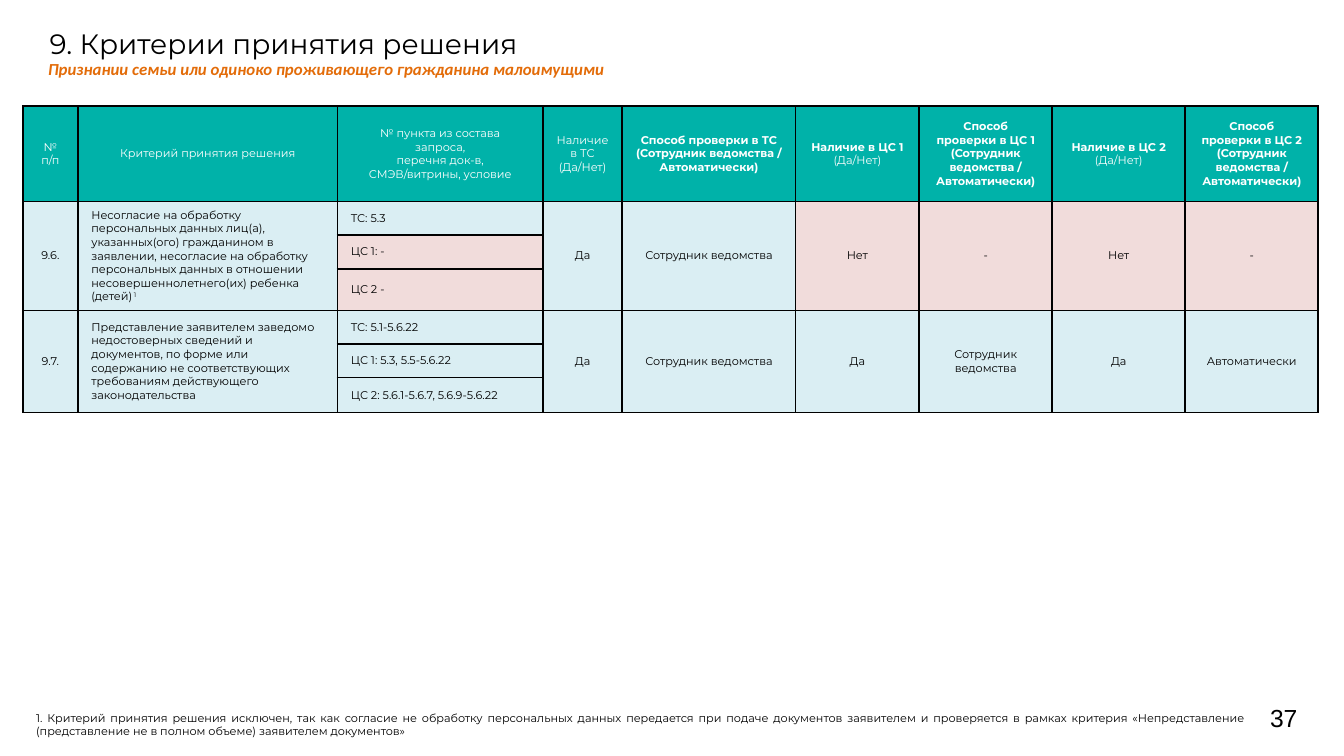
from lxml.etree import SubElement
from pptx import Presentation
from pptx.dml.color import RGBColor
from pptx.enum.text import MSO_ANCHOR, PP_ALIGN
from pptx.oxml.ns import qn
from pptx.util import Inches, Pt

GRID = 0.1  # inches per grid column and row
COLORS = {"black": "000000", "white": "FFFFFF", "teal": "00B2A9",
          "blue": "DAEEF3", "pink": "F1DCDB", "orange": "E36C09"}
INSETS = (1, 0.5)
COLUMNS = (4.1, 19.3, 15.3, 5.9, 12.9, 9.2, 9.9, 9.9, 9.9)
ROWS = (7.1, 2.5, 2.5, 3.1, 2.5, 2.5, 2.6)
SOURCE_COLUMN = 2
TEXT_COLUMNS = (1, SOURCE_COLUMN)

# Every cell is a list of paragraphs; every paragraph is a list of (text, style) runs.
CHECKED_BY = [("(Сотрудник ведомства / Автоматически)", "bold")]
YES_NO = [("(Да/Нет)", "")]


def check_header(system):
    return [[(f"Способ проверки в {system}", "bold")], CHECKED_BY]


def presence_header(system, style):
    return [[(f"Наличие в {system}", style)], YES_NO]


HEADERS = [
    [[("№ п/п", "")]],
    [[("Критерий принятия решения", "")]],
    [[("№ пункта из состава\nзапроса,", "")],
     [("перечня док-в, СМЭВ/витрины, условие", "")]],
    presence_header("ТС", ""), check_header("ТС"),
    presence_header("ЦС 1", "bold"), check_header("ЦС 1"),
    presence_header("ЦС 2", "bold"), check_header("ЦС 2"),
]

CRITERIA = [
    {"number": "9.6.",
     "name": [("Несогласие на обработку персональных данных лиц(а), указанных(ого) "
               "гражданином в заявлении, несогласие на обработку персональных данных "
               "в отношении несовершеннолетнего(их) ребенка (детей)", ""),
              (" 1", "superscript")],
     "sources": ["ТС: 5.3", "ЦС 1: -", "ЦС 2 -"],
     "answers": ["Да", "Сотрудник ведомства", "Нет", "-", "Нет", "-"],
     "target_fill": "pink"},
    {"number": "9.7.",
     "name": [("Представление заявителем заведомо недостоверных сведений и документов, "
               "по форме или содержанию не соответствующих требованиям действующего "
               "законодательства", "")],
     "sources": ["ТС: 5.1-5.6.22", "ЦС 1: 5.3, 5.5-5.6.22",
                 "ЦС 2: 5.6.1-5.6.7, 5.6.9-5.6.22"],
     "answers": ["Да", "Сотрудник ведомства", "Да", "Сотрудник ведомства",
                 "Да", "Автоматически"],
     "target_fill": "blue"},
]


def grid(units):
    return Inches(units * GRID)


def color(name):
    return RGBColor.from_string(COLORS[name])


class CriteriaSlide:
    font = "Montserrat"
    small_size = 6

    def __init__(self, presentation):
        self.slide = presentation.slides.add_slide(presentation.slide_layouts[6])

    def add_run(self, paragraph, text, style="", size=small_size, font=font, ink="black"):
        for index, line in enumerate(text.split("\n")):
            if index:
                paragraph.add_line_break()
            run = paragraph.add_run()
            run.text = line
            run.font.name = font
            run.font.size = Pt(size)
            run.font.bold = "bold" in style
            run.font.italic = "italic" in style
            run.font.color.rgb = color(ink)
            if style == "superscript":
                run.font._element.set("baseline", "30000")

    def add_text(self, place, text, insets=INSETS, align=PP_ALIGN.LEFT,
                 anchor=MSO_ANCHOR.TOP, **run_style):
        box = self.slide.shapes.add_textbox(*map(grid, place))
        frame = box.text_frame
        frame.word_wrap = True
        frame.vertical_anchor = anchor
        frame.margin_left = frame.margin_right = grid(insets[0])
        frame.margin_top = frame.margin_bottom = grid(insets[1])
        paragraph = frame.paragraphs[0]
        paragraph.alignment = align
        self.add_run(paragraph, text, **run_style)

    def add_borders(self, cell):
        """Draw all four edges; they must precede the fill in the cell properties."""
        properties = cell._tc.get_or_add_tcPr()
        for edge in ("a:lnL", "a:lnR", "a:lnT", "a:lnB"):
            line = SubElement(properties, qn(edge), w=str(Pt(1)))
            fill = SubElement(line, qn("a:solidFill"))
            SubElement(fill, qn("a:srgbClr"), val=COLORS["black"])

    def fill_cell(self, cell, paragraphs, fill, align=PP_ALIGN.CENTER, ink="black"):
        cell.fill.solid()
        cell.fill.fore_color.rgb = color(fill)
        cell.vertical_anchor = MSO_ANCHOR.MIDDLE
        frame = cell.text_frame
        for index, runs in enumerate(paragraphs):
            paragraph = frame.add_paragraph() if index else frame.paragraphs[0]
            paragraph.alignment = align
            for text, style in runs:
                self.add_run(paragraph, text, style, ink=ink)

    def add_table(self, left, top):
        table = self.slide.shapes.add_table(
            len(ROWS), len(COLUMNS), grid(left), grid(top),
            grid(sum(COLUMNS)), grid(sum(ROWS))).table
        for column, width in zip(table.columns, COLUMNS):
            column.width = grid(width)
        for row, height in zip(table.rows, ROWS):
            row.height = grid(height)
        for cell in table.iter_cells():
            self.add_borders(cell)
            cell.text_frame.paragraphs[0].font.size = Pt(self.small_size)
        for column, header in enumerate(HEADERS):
            self.fill_cell(table.cell(0, column), header, "teal", ink="white")
        first_row = 1
        for criterion in CRITERIA:
            self.add_criterion(table, first_row, criterion)
            first_row += len(criterion["sources"])

    def add_criterion(self, table, first_row, criterion):
        sources = criterion["sources"]
        target_fill = criterion["target_fill"]
        for offset, source in enumerate(sources):
            self.fill_cell(table.cell(first_row + offset, SOURCE_COLUMN), [[(source, "")]],
                           target_fill if offset else "blue", PP_ALIGN.LEFT)
        answers = [[(answer, "")] for answer in criterion["answers"]]
        contents = [[(criterion["number"], "")], criterion["name"], None, *answers]
        for column, runs in enumerate(contents):
            if column == SOURCE_COLUMN:
                continue
            cell = table.cell(first_row, column)
            cell.merge(table.cell(first_row + len(sources) - 1, column))
            self.fill_cell(cell, [runs], target_fill if column > 4 else "blue",
                           PP_ALIGN.LEFT if column in TEXT_COLUMNS else PP_ALIGN.CENTER)


def main():
    presentation = Presentation()
    presentation.slide_width = grid(100)
    presentation.slide_height = grid(56.25)
    page = CriteriaSlide(presentation)
    page.add_text((94.5, 51.9, 4.7, 3), "37", insets=(0, 0),
                  anchor=MSO_ANCHOR.MIDDLE, size=13.2, font="Arial")
    page.add_text((3.7, 2, 70, 2.9), "9. Критерии принятия решения", insets=(0, 0), size=15)
    page.add_table(1.7, 7.9)
    page.add_text((2.6, 3.9, 78.3, 2.5),
                  "Признании семьи или одиноко проживающего гражданина малоимущими",
                  style="bold italic", size=9, font="Calibri", ink="orange")
    page.add_text((1.7, 52.4, 91.8, 4),
                  "1. Критерий принятия решения исключен, так как согласие не обработку "
                  "персональных данных передается при подаче документов заявителем и "
                  "проверяется в рамках критерия «Непредставление (представление не в "
                  "полном объеме) заявителем документов»", align=PP_ALIGN.JUSTIFY)
    presentation.save("out.pptx")


if __name__ == "__main__":
    main()
